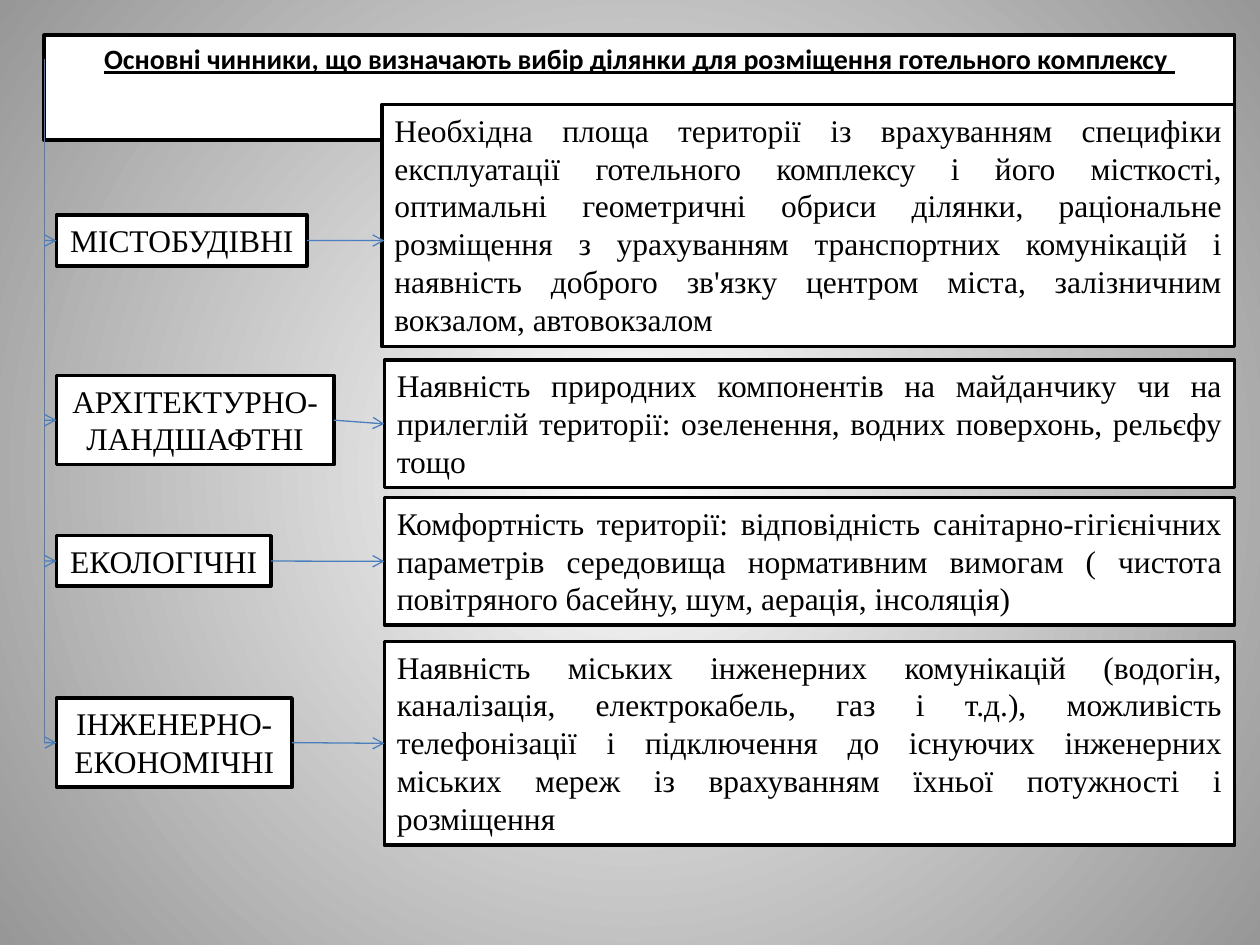
"""Build a slide on the factors that decide the choice of a hotel site."""
from lxml.etree import SubElement
from pptx import Presentation
from pptx.dml.color import RGBColor as RGB
from pptx.enum.shapes import MSO_CONNECTOR as LINK
from pptx.enum.text import MSO_ANCHOR as ANCHOR, MSO_AUTO_SIZE as FIT, PP_ALIGN as ALIGN
from pptx.oxml.ns import qn
from pptx.util import Cm, Pt

COLORS = {"ink": "000000", "paper": "FFFFFF", "edge": "979797", "arrow": "4B7EBC"}
SPINE_X, FACTOR_X, DETAIL_X, RIGHT_X = 0.89, 1.14, 7.75, 24.89

FACTORS = [
    ("МІСТОБУДІВНІ", 4.34, 5.05, 1.02, False,
     "Необхідна площа території із врахуванням специфіки експлуатації готельного "
     "комплексу і його місткості, оптимальні геометричні обриси ділянки, раціональне "
     "розміщення з урахуванням транспортних комунікацій і наявність доброго зв'язку "
     "центром міста, залізничним вокзалом, автовокзалом", 7.7, 2.11, 4.88),
    ("АРХІТЕКТУРНО-ЛАНДШАФТНІ", 7.57, 5.59, 1.8, True,
     "Наявність природних компонентів на майданчику чи на прилеглій території: "
     "озеленення, водних поверхонь, рельєфу тощо", DETAIL_X, 7.26, 2.57),
    ("ЕКОЛОГІЧНІ", 10.8, 4.32, 1.02, False,
     "Комфортність території: відповідність санітарно-гігієнічних параметрів "
     "середовища нормативним вимогам ( чистота повітряного басейну, шум, аерація, "
     "інсоляція)", DETAIL_X, 10.03, 2.57),
    ("ІНЖЕНЕРНО-ЕКОНОМІЧНІ", 14.07, 4.75, 1.8, True,
     "Наявність міських інженерних комунікацій (водогін, каналізація, електрокабель, "
     "газ і т.д.), можливість телефонізації і підключення до існуючих інженерних "
     "міських мереж із врахуванням їхньої потужності і розміщення",
     DETAIL_X, 12.93, 4.11),
]


def frame_text(box, text, align, font="Times New Roman", size=18, wrap=True):
    box.fill.solid()
    box.fill.fore_color.rgb = RGB.from_string(COLORS["paper"])
    box.line.color.rgb = RGB.from_string(COLORS["ink"])
    box.line.width = Pt(2)
    frame = box.text_frame
    frame.word_wrap = wrap
    frame.auto_size = FIT.SHAPE_TO_FIT_TEXT
    frame.vertical_anchor = ANCHOR.TOP
    paragraph = frame.paragraphs[0]
    paragraph.alignment = align
    run = paragraph.add_run()
    run.text = text
    run.font.name = font
    run.font.size = Pt(size)
    run.font.color.rgb = RGB.from_string(COLORS["ink"])
    return run


def add_link(x1, y1, x2, y2, arrow=True):
    link = slide.shapes.add_connector(LINK.STRAIGHT, Cm(x1), Cm(y1), Cm(x2), Cm(y2))
    link.line.color.rgb = RGB.from_string(COLORS["arrow"])
    link.line.width = Pt(0.75)
    properties = link._element.spPr
    if arrow:
        SubElement(properties.find(qn("a:ln")), qn("a:tailEnd"), type="arrow")
    SubElement(properties, qn("a:effectLst"))
    return link


deck = Presentation()
deck.slide_width, deck.slide_height = Cm(25.4), Cm(19.05)
slide = deck.slides.add_slide(deck.slide_layouts[5])

backdrop = slide.background.fill
backdrop.gradient()
for stop, name, position in zip(backdrop.gradient_stops, ("paper", "edge"), (0, 1)):
    stop.color.rgb = RGB.from_string(COLORS[name])
    stop.position = position
gradient = slide.background._cSld.find(".//" + qn("a:gradFill"))
gradient.remove(gradient.find(qn("a:lin")))
glow = SubElement(gradient, qn("a:path"), path="circle")
SubElement(glow, qn("a:fillToRect"), l="50000", t="50000", r="50000", b="50000")

heading = slide.shapes.title
heading.left, heading.top = Cm(SPINE_X), Cm(0.71)
heading.width, heading.height = Cm(RIGHT_X - SPINE_X), Cm(0.94)
heading_run = frame_text(
    heading,
    "Основні чинники, що визначають вибір ділянки для розміщення готельного комплексу ",
    ALIGN.CENTER, "Calibri", 16)
heading_run.font.bold = True
heading_run.font.underline = True

for label, top, width, height, wrap, text, detail_x, detail_top, detail_height in FACTORS:
    factor = slide.shapes.add_textbox(Cm(FACTOR_X), Cm(top), Cm(width), Cm(height))
    frame_text(factor, label, ALIGN.CENTER, wrap=wrap)
    detail = slide.shapes.add_textbox(
        Cm(detail_x), Cm(detail_top), Cm(RIGHT_X - detail_x), Cm(detail_height))
    frame_text(detail, text, ALIGN.JUSTIFY)

    middle = top + height / 2
    branch = add_link(SPINE_X, middle, FACTOR_X, middle)
    branch.end_connect(factor, 1)
    pointer = add_link(FACTOR_X + width, middle, DETAIL_X, middle)
    pointer.begin_connect(factor, 3)
    if abs(detail_top + detail_height / 2 - middle) < 0.1:
        pointer.end_connect(detail, 1)

spine = add_link(SPINE_X, 1.18, SPINE_X, middle, arrow=False)
spine.begin_connect(heading, 1)

deck.save("out.pptx")
